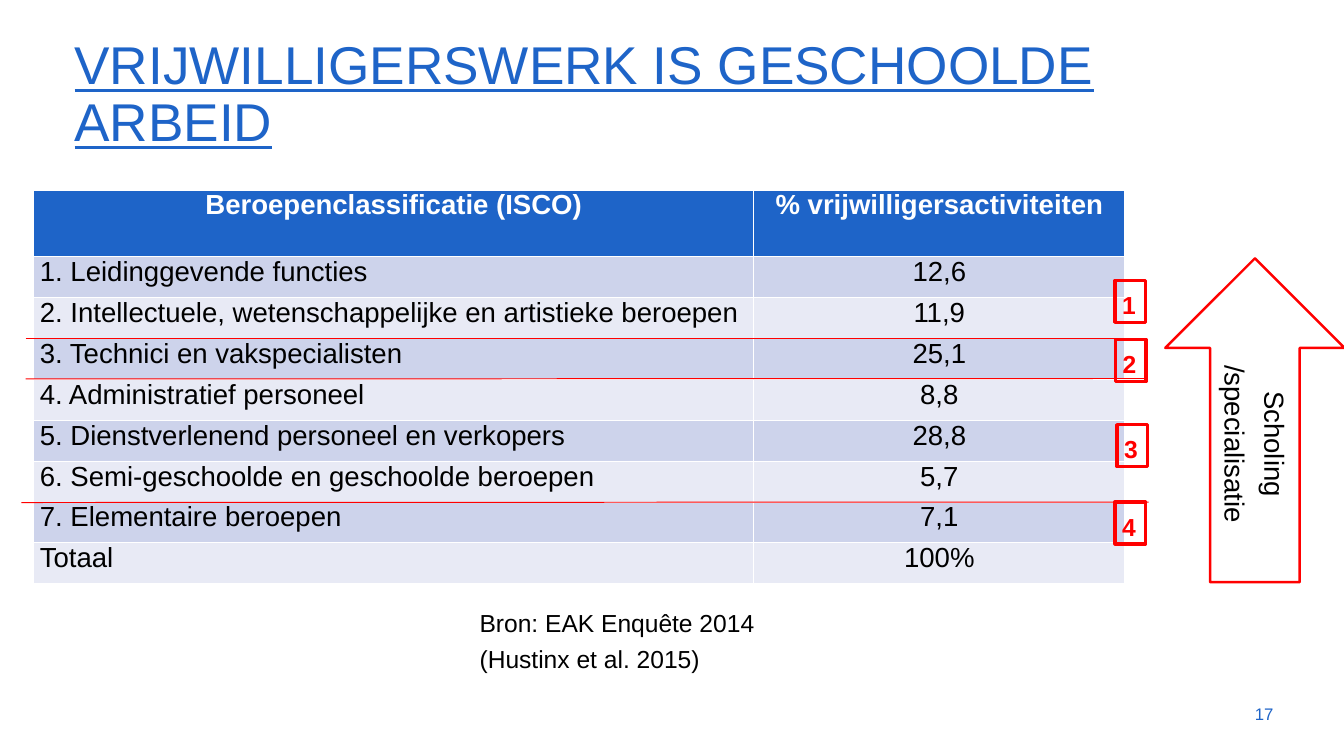
from lxml import etree
from pptx import Presentation
from pptx.dml.color import RGBColor
from pptx.enum.shapes import MSO_CONNECTOR, MSO_SHAPE
from pptx.enum.text import MSO_ANCHOR, MSO_AUTO_SIZE, PP_ALIGN
from pptx.oxml.ns import qn
from pptx.util import Pt

LEFT, CENTER, RIGHT = PP_ALIGN.LEFT, PP_ALIGN.CENTER, PP_ALIGN.RIGHT
TOP, MIDDLE, BOTTOM = MSO_ANCHOR.TOP, MSO_ANCHOR.MIDDLE, MSO_ANCHOR.BOTTOM
STRAIGHT = MSO_CONNECTOR.STRAIGHT
RECTANGLE, UP_ARROW = MSO_SHAPE.RECTANGLE, MSO_SHAPE.UP_ARROW
NO_AUTOFIT = MSO_AUTO_SIZE.NONE

BLUE = RGBColor(0x1E, 0x64, 0xC8)
RED = RGBColor(0xFF, 0x00, 0x00)
BLACK = RGBColor(0x00, 0x00, 0x00)
WHITE = RGBColor(0xFF, 0xFF, 0xFF)
BANDS = (RGBColor(0xE8, 0xEA, 0xF5), RGBColor(0xCD, 0xD3, 0xEB))
FONT = "Arial"

TITLE = "VRIJWILLIGERSWERK IS GESCHOOLDE ARBEID"
ROWS = [
    ("Beroepenclassificatie (ISCO)", "% vrijwilligersactiviteiten"),
    ("1. Leidinggevende functies", "12,6"),
    ("2. Intellectuele, wetenschappelijke en artistieke beroepen", "11,9"),
    ("3. Technici en vakspecialisten", "25,1"),
    ("4. Administratief personeel", "8,8"),
    ("5. Dienstverlenend personeel en verkopers", "28,8"),
    ("6. Semi-geschoolde en geschoolde beroepen", "5,7"),
    ("7. Elementaire beroepen", "7,1"),
    ("Totaal", "100%"),
]
SOURCE = ["Bron: EAK Enquête 2014", "(Hustinx et al. 2015)"]
ARROW_LABEL = "Scholing /specialisatie"
PAGE = "17"
DIVIDERS = [(26, 344.3, 1164, 344.3), (26, 385, 1165.5, 384.5),
            (21.6, 510.5, 1166.5, 510)]
LEVELS = [("1", 1132.5, 285), ("2", 1133, 345), ("3", 1134.5, 431.5),
          ("4", 1132.5, 510)]

TABLE_LEFT, TABLE_TOP = 34, 193
COL_WIDTHS = (731.5, 377)
HEADER_HEIGHT, ROW_HEIGHT = 68, 41.5


def write(tf, lines, size, color, align=LEFT, spacing=None, bold=False):
    """Fill a text frame with uniformly formatted paragraphs."""
    tf.text = "\n".join(lines)
    tf.word_wrap = True
    for p in tf.paragraphs:
        p.alignment = align
        p.line_spacing = spacing
        for r in p.runs:
            r.font.name, r.font.size, r.font.bold = FONT, Pt(size), bold
            r.font.color.rgb = color


def add_text(shapes, box, lines, size, color, align=LEFT, spacing=None):
    """Add a text box and return it."""
    sp = shapes.add_textbox(*map(Pt, box))
    write(sp.text_frame, lines, size, color, align, spacing)
    return sp


def add_outline(shapes, kind, box, width):
    """Add an unfilled red shape and return it."""
    sp = shapes.add_shape(kind, *map(Pt, box))
    sp.shadow.inherit = False
    sp.fill.background()
    sp.line.color.rgb = RED
    sp.line.width = Pt(width)
    return sp


def add_borders(cell):
    """Give a cell thin white borders on all sides."""
    tc_pr = cell._tc.get_or_add_tcPr()
    for side in ("a:lnL", "a:lnR", "a:lnT", "a:lnB"):
        ln = etree.SubElement(tc_pr, qn(side), w=str(Pt(1)))
        fill = etree.SubElement(ln, qn("a:solidFill"))
        etree.SubElement(fill, qn("a:srgbClr"), val=str(WHITE))


def add_jobs_table(shapes):
    """Add the table of occupations and their share of activities."""
    heights = [HEADER_HEIGHT] + [ROW_HEIGHT] * (len(ROWS) - 1)
    table = shapes.add_table(
        len(ROWS), len(COL_WIDTHS), Pt(TABLE_LEFT), Pt(TABLE_TOP),
        Pt(sum(COL_WIDTHS)), Pt(sum(heights))).table
    for col, width in zip(table.columns, COL_WIDTHS):
        col.width = Pt(width)
    for i, (values, height) in enumerate(zip(ROWS, heights)):
        table.rows[i].height = Pt(height)
        header = i == 0
        for j, value in enumerate(values):
            cell = table.cell(i, j)
            cell.margin_left = cell.margin_right = Pt(6.5)
            cell.margin_top = cell.margin_bottom = 0
            add_borders(cell)
            cell.fill.solid()
            cell.fill.fore_color.rgb = BLUE if header else BANDS[i % 2]
            write(cell.text_frame, [value], 28, WHITE if header else BLACK,
                  CENTER if header or j else LEFT, bold=header)


def main():
    """Build the slide and save it."""
    prs = Presentation()
    prs.slide_width, prs.slide_height = Pt(1365), Pt(768)
    slide = prs.slides.add_slide(prs.slide_layouts[5])
    shapes = slide.shapes

    title = shapes.title
    title.left, title.top, title.width, title.height = map(
        Pt, (68.5, 31.5, 1205, 128))
    tf = title.text_frame
    write(tf, [TITLE], 54, BLUE, spacing=0.9)
    tf.auto_size = NO_AUTOFIT
    tf.vertical_anchor = BOTTOM
    tf.paragraphs[0].runs[0].font.underline = True

    add_jobs_table(shapes)

    page = add_text(shapes, (1227.5, 705, 73, 41), [PAGE], 17, BLUE, RIGHT)
    page.text_frame.vertical_anchor = MIDDLE

    for ends in DIVIDERS:
        line = shapes.add_connector(STRAIGHT, *map(Pt, ends))
        line.line.color.rgb = RED
        line.line.width = Pt(1)
        etree.SubElement(line._element.spPr, qn("a:effectLst"))

    add_outline(shapes, UP_ARROW, (1183.5, 262.5, 182, 329), 2.5)
    label = add_text(shapes, (1155.5, 407, 245.5, 88), [ARROW_LABEL], 28,
                     BLACK, CENTER, 1.2)
    label.rotation = 90
    add_text(shapes, (480, 608.5, 531, 79), SOURCE, 25, BLACK, spacing=1.2)

    for number, left, top in LEVELS:
        sp = add_outline(shapes, RECTANGLE, (left, top, 31, 42.5), 3.5)
        write(sp.text_frame, [number], 25, RED, spacing=1.2, bold=True)
        sp.text_frame.vertical_anchor = TOP

    prs.save("out.pptx")


if __name__ == "__main__":
    main()
